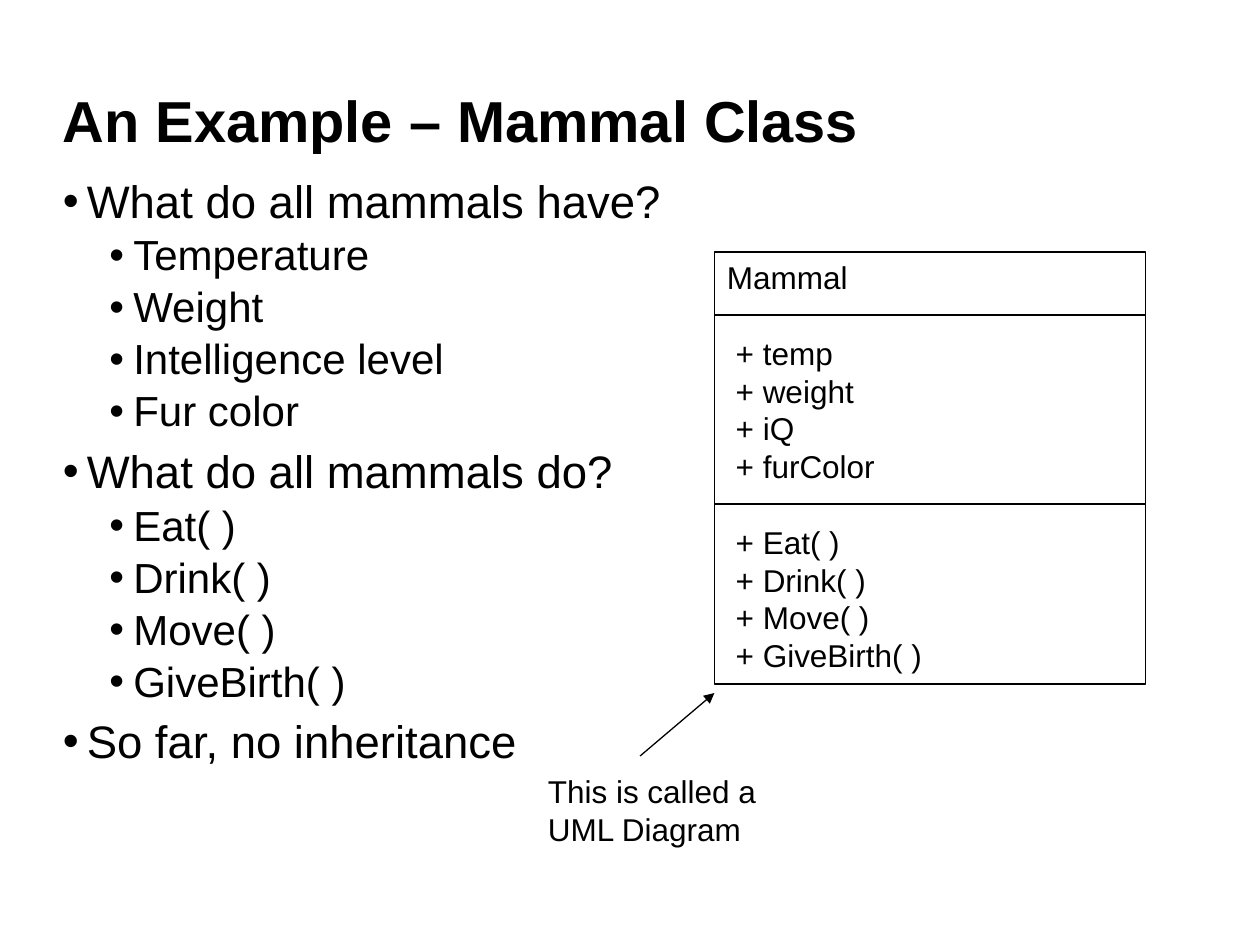
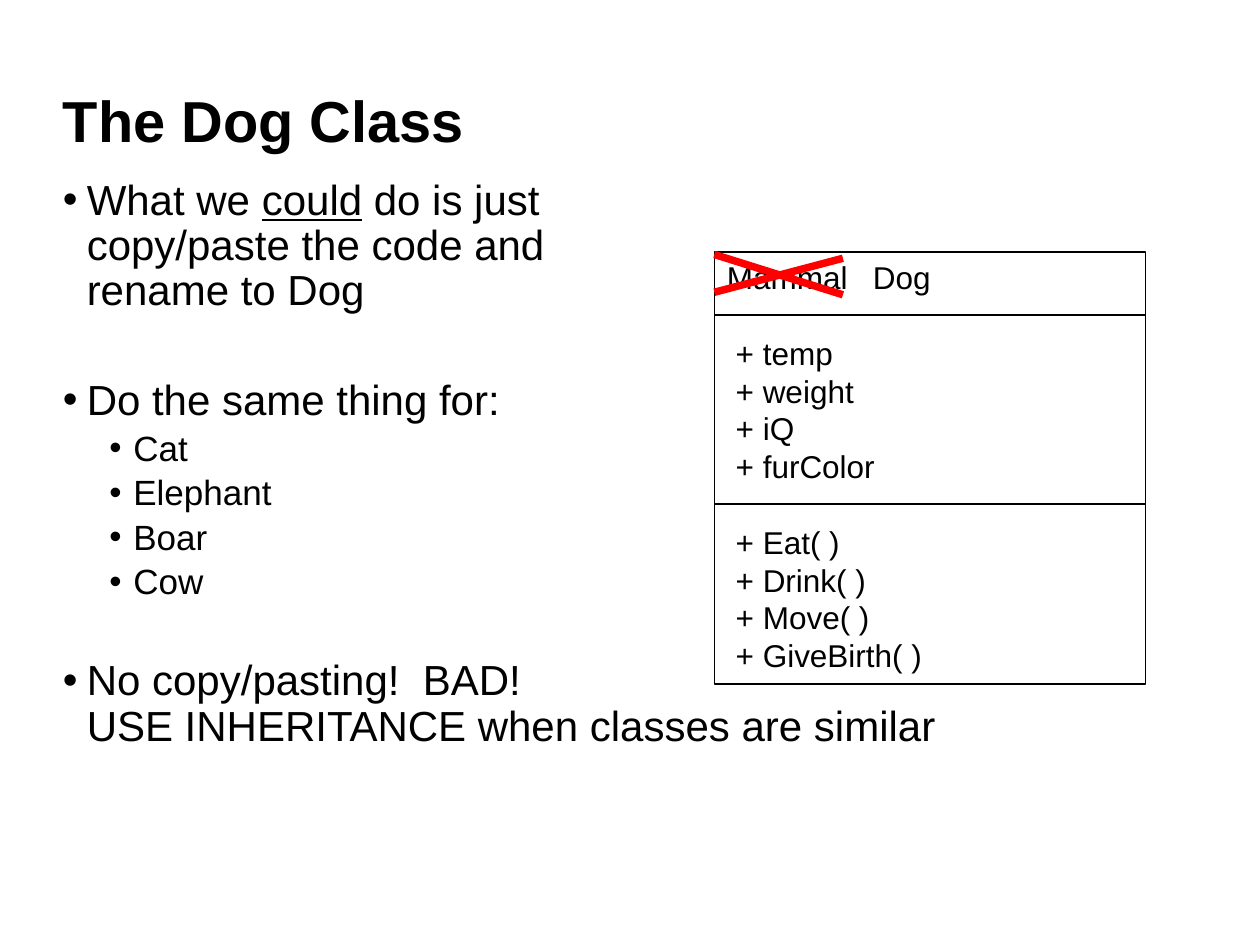
from lxml import etree
from pptx import Presentation
from pptx.dml.color import RGBColor
from pptx.enum.shapes import MSO_CONNECTOR, MSO_SHAPE
from pptx.enum.text import MSO_ANCHOR, PP_ALIGN
from pptx.oxml.ns import qn
from pptx.util import Inches, Pt

RECT = MSO_SHAPE.RECTANGLE
LINE = MSO_CONNECTOR.STRAIGHT
TOP = MSO_ANCHOR.TOP
MIDDLE = MSO_ANCHOR.MIDDLE
LEFT = PP_ALIGN.LEFT

BLACK = RGBColor(0, 0, 0)
RED = RGBColor(0xFF, 0, 0)
FONT = "Arial"
STEP = 0.19
LINE_GAP = 21.6
CARD_X, CARD_Y, CARD_W, CARD_H = 5.67, 2, 3.42, 3.43

FIELDS = ["+ temp", "+ weight", "+ iQ", "+ furColor"]
CALLS = ["Eat( )", "Drink( )", "Move( )", "GiveBirth( )"]


def add_run(para, text, size, bold=False, under=False):
    run = para.add_run()
    run.text = text
    font = run.font
    font.name, font.size, font.bold = FONT, Pt(size), bold
    font.underline = under
    font.color.rgb = BLACK


def add_lines(para, lines, size):
    for i, line in enumerate(lines):
        if i:
            para.add_line_break()
        for j, part in enumerate(line.split("_")):
            add_run(para, part, size, under=j % 2 == 1)


def set_frame(frame, anchor=TOP):
    frame.word_wrap = True
    frame.vertical_anchor = anchor
    return frame


def add_box(slide, x, y, w, h, anchor=TOP):
    box = slide.shapes.add_textbox(Inches(x), Inches(y), Inches(w), Inches(h))
    return set_frame(box.text_frame, anchor)


def next_para(frame, first):
    para = frame.paragraphs[0] if first else frame.add_paragraph()
    para.alignment = LEFT
    return para


def add_title(slide, text):
    para = add_box(slide, 0.4, 0.56, 9.21, 0.84, MIDDLE).paragraphs[0]
    para.line_spacing = 0.9
    add_run(para, text, 33, bold=True)


def add_bullet(para, level):
    props = para._p.get_or_add_pPr()
    props.set("marL", str(Inches(STEP + 0.37 * level)))
    props.set("indent", str(Inches(-STEP)))
    etree.SubElement(props, qn("a:buFont")).set("typeface", FONT)
    etree.SubElement(props, qn("a:buChar")).set("char", "•")


def add_body(slide, items, sizes):
    frame = add_box(slide, 0.4, 1.37, 9.21, 5.48)
    for i, (level, lines, extra) in enumerate(items):
        para = next_para(frame, i == 0)
        add_bullet(para, level)
        para.level = level
        para.line_spacing = 0.9
        if i:
            para.space_before = Pt((7.5, 3.8)[level] + extra)
        add_lines(para, lines, sizes[level])


def add_line(slide, start, end, width, color=BLACK, arrow=False):
    line = slide.shapes.add_connector(
        LINE, *(Inches(n) for n in (*start, *end)))
    line.line.color.rgb = color
    line.line.width = Pt(width)
    if arrow:
        tail = etree.SubElement(line.line._get_or_add_ln(), qn("a:tailEnd"))
        tail.set("type", "triangle")
    etree.SubElement(line._element.spPr, qn("a:effectLst"))


def add_card(slide, name):
    card = slide.shapes.add_shape(
        RECT, Inches(CARD_X), Inches(CARD_Y), Inches(CARD_W), Inches(CARD_H))
    card.shadow.inherit = False
    card.fill.background()
    card.line.color.rgb = BLACK
    card.line.width = Pt(0.75)
    frame = set_frame(card.text_frame)
    head = next_para(frame, True)
    tabs = etree.SubElement(head._p.get_or_add_pPr(), qn("a:tabLst"))
    stop = etree.SubElement(tabs, qn("a:tab"))
    stop.set("pos", str(Inches(1.16)))
    stop.set("algn", "l")
    add_run(head, name, 18)
    for group in (FIELDS, ["+ " + call for call in CALLS]):
        for i, text in enumerate(group):
            para = next_para(frame, False)
            para._p.get_or_add_pPr().set("marL", str(Inches(0.07)))
            if i == 0:
                para.space_before = Pt(LINE_GAP)
            add_run(para, text, 18)
    for y in (2.5, 4):
        add_line(slide, (CARD_X, y), (CARD_X + CARD_W, y), 1.25)


def add_slide(deck, title, items, sizes, name):
    slide = deck.slides.add_slide(deck.slide_layouts[6])
    add_title(slide, title)
    add_body(slide, items, sizes)
    add_card(slide, name)
    return slide


def topic(*lines, extra=0):
    return (0, lines, extra)


def points(texts):
    return [(1, [text], 0) for text in texts]


def main():
    deck = Presentation()
    deck.slide_width, deck.slide_height = Inches(10), Inches(7.5)

    traits = ["Temperature", "Weight", "Intelligence level", "Fur color"]
    items = [topic("What do all mammals have?"), *points(traits),
             topic("What do all mammals do?"), *points(CALLS),
             topic("So far, no inheritance")]
    slide = add_slide(deck, "An Example – Mammal Class", items, (26, 24),
                      "Mammal")
    add_line(slide, (5.08, 6), (CARD_X, 5.5), 0.75, arrow=True)
    note = add_box(slide, 4.25, 6.08, 1.94, 0.71)
    add_lines(note.paragraphs[0], ["This is called a", "UML Diagram"], 18)

    items = [topic("What we _could_ do is just", "copy/paste the code and",
                   "rename to Dog"),
             topic("Do the same thing for:", extra=29.1),
             *points(["Cat", "Elephant", "Boar", "Cow"]),
             topic("No copy/pasting!  BAD!",
                   "USE INHERITANCE when classes are similar", extra=25.4)]
    slide = add_slide(deck, "The Dog Class", items, (24, 20), "Mammal\tDog")
    for left, right in ((2.02, 2.34), (2.32, 2.05)):
        add_line(slide, (CARD_X, left), (6.69, right), 4.25, RED)

    deck.save("out.pptx")


if __name__ == "__main__":
    main()
